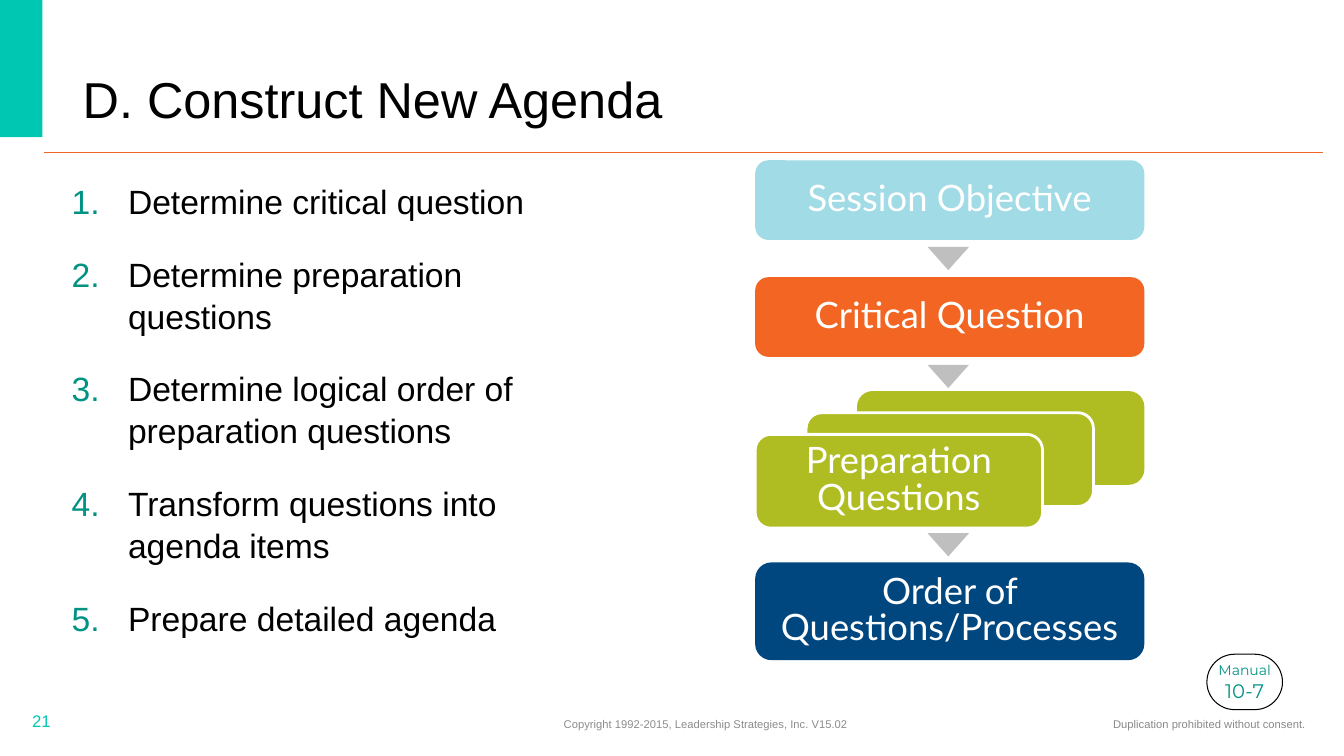
from dataclasses import dataclass

from lxml import etree
from pptx import Presentation
from pptx.dml.color import RGBColor
from pptx.enum import shapes, text
from pptx.oxml import ns
from pptx.util import Inches, Pt


@dataclass(frozen=True)
class Theme:
    font: str = "Arial"
    diagram_font: str = "Lato"
    badge_font: str = "Montserrat"
    black: str = "000000"
    white: str = "FFFFFF"
    teal: str = "00C7B1"
    dark_teal: str = "009383"
    orange: str = "F26522"
    navy: str = "00467F"
    sky: str = "A0DBE6"
    lime: str = "AFBD22"
    arrow: str = "BFBFBF"
    notice: str = "898989"
    copyright: str = "8C8C8C"
    title_size: float = 36
    body_size: float = 24
    diagram_size: float = 26
    diagram_leading: float = 26.2
    number_size: float = 12
    footer_size: float = 8
    badge_sizes: tuple = (10, 14)


theme = Theme()
TITLE = "D. Construct New Agenda"
STEPS = [
    "Determine critical question",
    "Determine preparation questions",
    "Determine logical order of preparation questions",
    "Transform questions into agenda items",
    "Prepare detailed agenda",
]
FLOW = [
    ("Session Objective", theme.sky, 1.59, 0.79),
    ("Critical Question", theme.orange, 2.75, 0.79),
    ("Order of Questions/Processes", theme.navy, 5.58, 0.97),
]
STACK_LABELS = ["", "", "Preparation Questions"]
ARROW_TOPS = [2.45, 3.62, 5.29]
BADGE = ["Manual", "10-7"]
LEFT, CENTER, RIGHT = text.PP_ALIGN.LEFT, text.PP_ALIGN.CENTER, text.PP_ALIGN.RIGHT
FOOTERS = [
    ("21", (0.22, 6.95, 3, 0.4), LEFT, theme.number_size, theme.teal),
    ("Copyright 1992-2015, Leadership Strategies, Inc. V15.02", (3.62, 6.98, 6.76, 0.4),
     CENTER, theme.footer_size, theme.copyright),
    ("Duplication prohibited without consent.", (7.42, 6.98, 5.63, 0.4),
     RIGHT, theme.footer_size, theme.notice),
]
FLOW_LEFT, FLOW_WIDTH = 7.49, 3.86
CARD_WIDTH, CARD_HEIGHT, CARD_TOP, CARD_DROP = 2.85, 0.93, 3.88, 0.215
ROUNDED = shapes.MSO_SHAPE.ROUNDED_RECTANGLE


def rgb(color):
    return RGBColor.from_string(color)


def style(font, name, size, color):
    font.name, font.size = name, Pt(size)
    font.color.rgb = rgb(color)


def place(shape, box):
    shape.left, shape.top, shape.width, shape.height = map(Inches, box)


def add_block(parent, kind, box, fill, line=None, weight=0):
    shape = parent.add_shape(kind, *map(Inches, box))
    shape.shadow.inherit = False
    shape.fill.solid()
    shape.fill.fore_color.rgb = rgb(fill)
    if line:
        shape.line.color.rgb = rgb(line)
        shape.line.width = Pt(weight)
    else:
        shape.line.fill.background()
    return shape


def label(shape, words):
    frame = shape.text_frame
    frame.text = words
    frame.word_wrap = True
    frame.vertical_anchor = text.MSO_ANCHOR.MIDDLE
    para = frame.paragraphs[0]
    para.alignment = CENTER
    para.line_spacing = Pt(theme.diagram_leading)
    style(para.runs[0].font, theme.diagram_font, theme.diagram_size, theme.white)


def number_step(para):
    props = para._p.get_or_add_pPr()
    props.set("marL", str(Inches(0.56)))
    props.set("indent", str(-Inches(0.56)))
    color = etree.SubElement(props, ns.qn("a:buClr"))
    etree.SubElement(color, ns.qn("a:srgbClr"), val=theme.dark_teal)
    etree.SubElement(props, ns.qn("a:buFont"), typeface="+mj-lt")
    etree.SubElement(props, ns.qn("a:buAutoNum"), type="arabicPeriod")


def add_text(page):
    title, body = page.placeholders
    place(title, (0.72, 0.57, 8.12, 0.76))
    title.text_frame.text = TITLE
    title.text_frame.vertical_anchor = text.MSO_ANCHOR.BOTTOM
    title.text_frame.auto_size = text.MSO_AUTO_SIZE.NONE
    para = title.text_frame.paragraphs[0]
    para.alignment, para.line_spacing = LEFT, 0.9
    style(para.runs[0].font, theme.font, theme.title_size, theme.black)

    place(body, (0.61, 1.73, 5.23, 5.03))
    body.text_frame.text = "\n".join(STEPS)
    body.text_frame.auto_size = text.MSO_AUTO_SIZE.NONE
    for index, para in enumerate(body.text_frame.paragraphs):
        number_step(para)
        para.line_spacing = 1.04
        para.space_before, para.space_after = Pt(16 if index else 0), Pt(6)
        style(para.runs[0].font, theme.font, theme.body_size, theme.black)

    for words, box, alignment, size, color in FOOTERS:
        frame = page.shapes.add_textbox(*map(Inches, box)).text_frame
        frame.text = words
        frame.word_wrap = True
        frame.vertical_anchor = text.MSO_ANCHOR.MIDDLE
        para = frame.paragraphs[0]
        para.alignment = alignment
        style(para.runs[0].font, theme.font, size, color)


def add_frame(page):
    add_block(page.shapes, shapes.MSO_SHAPE.RECTANGLE, (-0.02, -0.02, 0.44, 1.38), theme.teal)
    rule = page.shapes.add_connector(
        shapes.MSO_CONNECTOR.STRAIGHT, *map(Inches, (0.44, 1.51, 13.12, 1.51)))
    rule.line.color.rgb = rgb(theme.orange)
    rule.line.width = Pt(0.5)
    etree.SubElement(rule._element.spPr, ns.qn("a:effectLst"))


def add_flow(page):
    for words, color, top, height in FLOW:
        label(add_block(page.shapes, ROUNDED, (FLOW_LEFT, top, FLOW_WIDTH, height), color), words)

    stack = page.shapes.add_group_shape().shapes
    step = (FLOW_WIDTH - CARD_WIDTH) / (len(STACK_LABELS) - 1)
    for index, words in enumerate(STACK_LABELS):
        left = FLOW_LEFT + FLOW_WIDTH - CARD_WIDTH - index * step
        box = (left, CARD_TOP + index * CARD_DROP, CARD_WIDTH, CARD_HEIGHT)
        card = add_block(stack, ROUNDED, box, theme.lime, theme.white if index else None, 2)
        if words:
            label(card, words)

    for top in ARROW_TOPS:
        arrow = add_block(page.shapes, shapes.MSO_SHAPE.ISOSCELES_TRIANGLE,
                          (9.2, top, 0.41, 0.23), theme.arrow)
        arrow.rotation = 180


def add_badge(page):
    badge = add_block(page.shapes, ROUNDED, (11.97, 6.49, 0.75, 0.55),
                      theme.white, theme.black, 0.75)
    badge.adjustments[0] = 0.5
    frame = badge.text_frame
    frame.text = "\v".join(BADGE)
    frame.word_wrap = False
    frame.vertical_anchor = text.MSO_ANCHOR.MIDDLE
    para = frame.paragraphs[0]
    para.alignment = CENTER
    for span, size in zip(para.runs, theme.badge_sizes):
        style(span.font, theme.badge_font, size, theme.dark_teal)


def main():
    deck = Presentation()
    deck.slide_width, deck.slide_height = Inches(13.33), Inches(7.5)
    page = deck.slides.add_slide(deck.slide_layouts[1])
    add_frame(page)
    add_text(page)
    add_flow(page)
    add_badge(page)
    deck.save("out.pptx")


if __name__ == "__main__":
    main()
